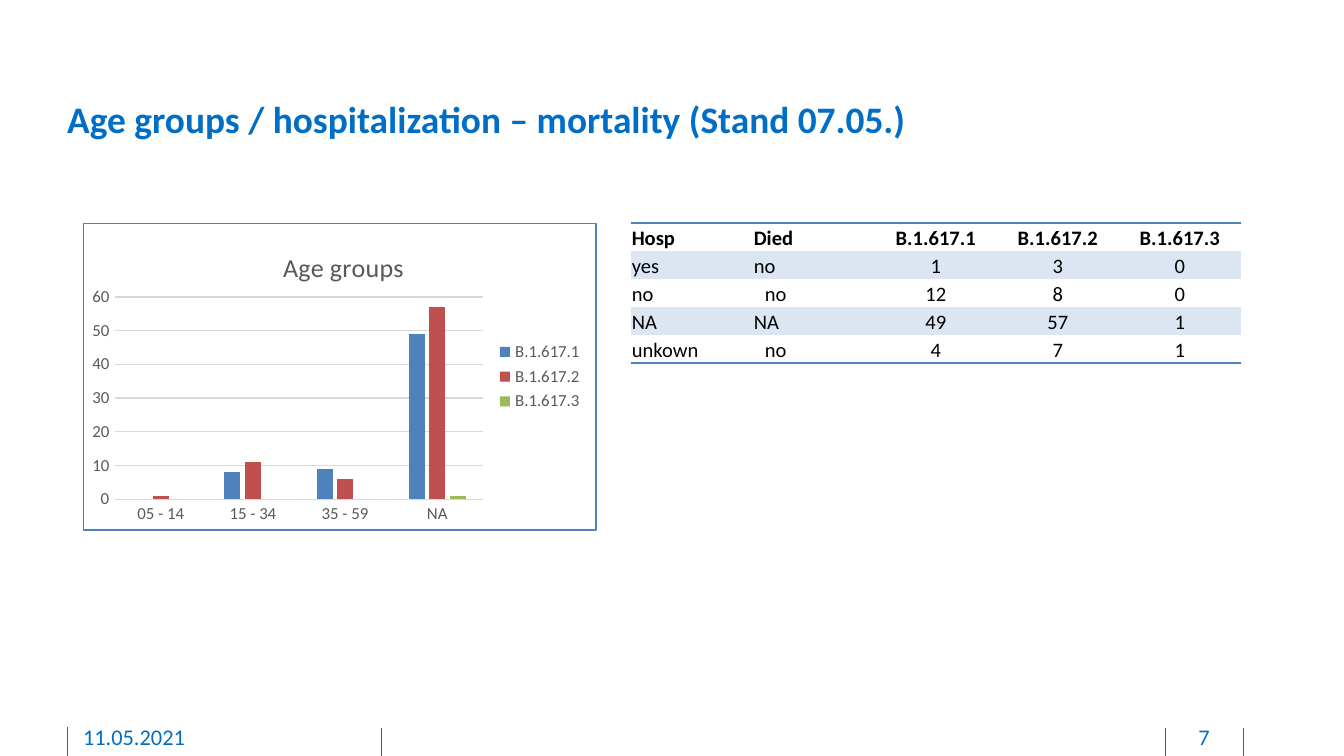
from lxml.etree import SubElement, fromstring
from pptx import Presentation
from pptx.chart.data import CategoryChartData
from pptx.dml.color import RGBColor
from pptx.enum.chart import XL_CHART_TYPE as ChartKind
from pptx.enum.chart import XL_LEGEND_POSITION as LegendSide
from pptx.enum.chart import XL_TICK_MARK as Tick
from pptx.enum.shapes import MSO_CONNECTOR as Connector
from pptx.enum.text import MSO_ANCHOR as Anchor
from pptx.enum.text import PP_ALIGN as Align
from pptx.oxml.ns import nsdecls, qn
from pptx.util import Cm, Pt

BLUE, STEEL, BAND = "006EC7", "4F81BD", "DCE6F2"
BLACK, GREY, GRID = "000000", "595959", "D9D9D9"
SERIES_COLOURS = [STEEL, "C0504D", "9BBB59"]
PLAIN_TABLE = "{2D5ABB26-0587-4C30-8999-92F81FD0307C}"


def colour(code):
    return RGBColor.from_string(code)


def line_xml(tag, code, points):
    return fromstring(
        f'<a:{tag} {nsdecls("a")} w="{Pt(points)}"><a:solidFill>'
        f'<a:srgbClr val="{code}"/></a:solidFill></a:{tag}>')


def set_layout(parent, index, inner=False, **fractions):
    """Place a chart part by fractions of the chart's size."""
    old = parent.find(qn("c:layout"))
    if old is not None:
        parent.remove(old)
    layout = fromstring(f'<c:layout {nsdecls("c")}/>')
    manual = SubElement(layout, qn("c:manualLayout"))
    if inner:
        SubElement(manual, qn("c:layoutTarget")).set("val", "inner")
    for name in ("x", "y"):
        SubElement(manual, qn(f"c:{name}Mode")).set("val", "edge")
    for name, value in fractions.items():
        SubElement(manual, qn(f"c:{name}")).set("val", str(value))
    parent.insert(index, layout)


class SlideBuilder:
    def __init__(self, page, font="Calibri"):
        self.page = page
        self.font = font

    def style(self, font, size, code, bold=False):
        font.name, font.size, font.bold = self.font, Pt(size), bold
        font.color.rgb = colour(code)

    def fill_text(self, frame, text, size=12, code=BLUE, bold=False,
                  align=Align.LEFT, spacing=None):
        para = frame.paragraphs[0]
        para.alignment = align
        if spacing:
            para.line_spacing = Pt(spacing)
        span = para.add_run()
        span.text = text
        self.style(span.font, size, code, bold)

    def text(self, text, left, top, width, height, bottom=0.0, **formats):
        box = self.page.shapes.add_textbox(Cm(left), Cm(top), Cm(width), Cm(height))
        frame = box.text_frame
        frame.word_wrap = True
        frame.margin_left = frame.margin_top = frame.margin_right = 0
        frame.margin_bottom = Cm(bottom)
        self.fill_text(frame, text, **formats)

    def vertical_line(self, x, top, bottom):
        line = self.page.shapes.add_connector(
            Connector.STRAIGHT, Cm(x), Cm(top), Cm(x), Cm(bottom))
        line.line.color.rgb = colour(BLUE)
        line.line.width = Pt(0.5)
        SubElement(line.element.spPr, qn("a:effectLst"))

    def column_chart(self, title, categories, series, left, top, width, height):
        data = CategoryChartData()
        data.categories = categories
        for name, values in series.items():
            data.add_series(name, values)
        chart = self.page.shapes.add_chart(
            ChartKind.COLUMN_CLUSTERED, Cm(left), Cm(top), Cm(width), Cm(height),
            data).chart
        self.style(chart.font, 10, BLACK)

        # Columns
        plot = chart.plots[0]
        plot.gap_width, plot.overlap, plot.vary_by_categories = 219, -27, False
        for column, code in zip(plot.series, SERIES_COLOURS):
            column.format.fill.solid()
            column.format.fill.fore_color.rgb = colour(code)

        # Axes and grid
        across, up = chart.category_axis, chart.value_axis
        for axis in (across, up):
            axis.major_tick_mark = axis.minor_tick_mark = Tick.NONE
            self.style(axis.tick_labels.font, 9, GREY)
        up.minimum_scale, up.maximum_scale, up.major_unit = 0, 60, 10
        up.format.line.fill.background()
        for line in (across.format.line, up.major_gridlines.format.line):
            line.color.rgb = colour(GRID)
            line.width = Pt(0.75)

        # Legend and title
        chart.has_legend = True
        chart.legend.position = LegendSide.RIGHT
        chart.legend.include_in_layout = False
        self.style(chart.legend.font, 9, GREY)
        chart.has_title = True
        self.fill_text(chart.chart_title.text_frame, title, size=14, code=GREY,
                       align=Align.CENTER)

        # Placement and frame
        body = chart.element.find(qn("c:chart"))
        set_layout(body.find(qn("c:title")), 1, x=0.38, y=0.07)
        set_layout(body.find(qn("c:plotArea")), 0, inner=True,
                   x=0.06, y=0.24, w=0.72, h=0.66)
        frame = fromstring(f'<c:spPr {nsdecls("c")}/>')
        frame.append(line_xml("ln", STEEL, 0.75))
        body.addnext(frame)

    def table(self, rows, left, top, width, height):
        table = self.page.shapes.add_table(
            len(rows), len(rows[0]), Cm(left), Cm(top), Cm(width), Cm(height)).table
        table.first_row = table.horz_banding = False
        table._tbl.tblPr.find(qn("a:tableStyleId")).text = PLAIN_TABLE
        edges = {0: "lnT", len(rows) - 1: "lnB"}
        for r, row in enumerate(rows):
            for c, text in enumerate(row):
                cell = table.cell(r, c)
                indented = c == 1 and r in (2, 4)
                cell.margin_left = Cm(0.23 if indented else 0.02)
                cell.margin_top = cell.margin_right = Cm(0.02)
                cell.margin_bottom = 0
                cell.vertical_anchor = Anchor.BOTTOM
                self.fill_text(cell.text_frame, text, size=11, code=BLACK,
                               bold=r == 0,
                               align=Align.CENTER if c > 1 else Align.LEFT)
                if r % 2:
                    cell.fill.solid()
                    cell.fill.fore_color.rgb = colour(BAND)
                else:
                    cell.fill.background()
                if r in edges:
                    cell._tc.get_or_add_tcPr().insert(0, line_xml(edges[r], STEEL, 1))


def main():
    deck = Presentation()
    deck.slide_width, deck.slide_height = Cm(25.4), Cm(14.29)
    builder = SlideBuilder(deck.slides.add_slide(deck.slide_layouts[6]))

    # Footer
    for x, top in ((1.27, 13.74), (7.21, 13.77), (22.02, 13.77), (23.5, 13.77)):
        builder.vertical_line(x, top, 14.29)
    builder.text("11.05.2021", 1.57, 13.67, 5.16, 0.53, bottom=0.13)
    builder.text("7", 22.07, 13.67, 1.37, 0.53, bottom=0.13, align=Align.CENTER)

    # Title
    builder.text("Age groups / hospitalization – mortality (Stand 07.05.)",
                 1.27, 1.9, 22.17, 0.79, size=20, bold=True, spacing=21.5)

    # Cases by age group
    builder.column_chart(
        "Age groups", ["05 - 14", "15 - 34", "35 - 59", "NA"],
        {"B.1.617.1": (None, 8, 9, 49),
         "B.1.617.2": (1, 11, 6, 57),
         "B.1.617.3": (None, None, None, 1)},
        1.57, 4.21, 9.71, 5.82)

    # Hospitalization and mortality
    builder.table(
        [["Hosp", "Died", "B.1.617.1", "B.1.617.2", "B.1.617.3"],
         ["yes", "no", "1", "3", "0"],
         ["no", "no", "12", "8", "0"],
         ["NA", "NA", "49", "57", "1"],
         ["unkown", "no", "4", "7", "1"]],
        11.92, 4.21, 11.53, 2.65)

    deck.save("out.pptx")


if __name__ == "__main__":
    main()
